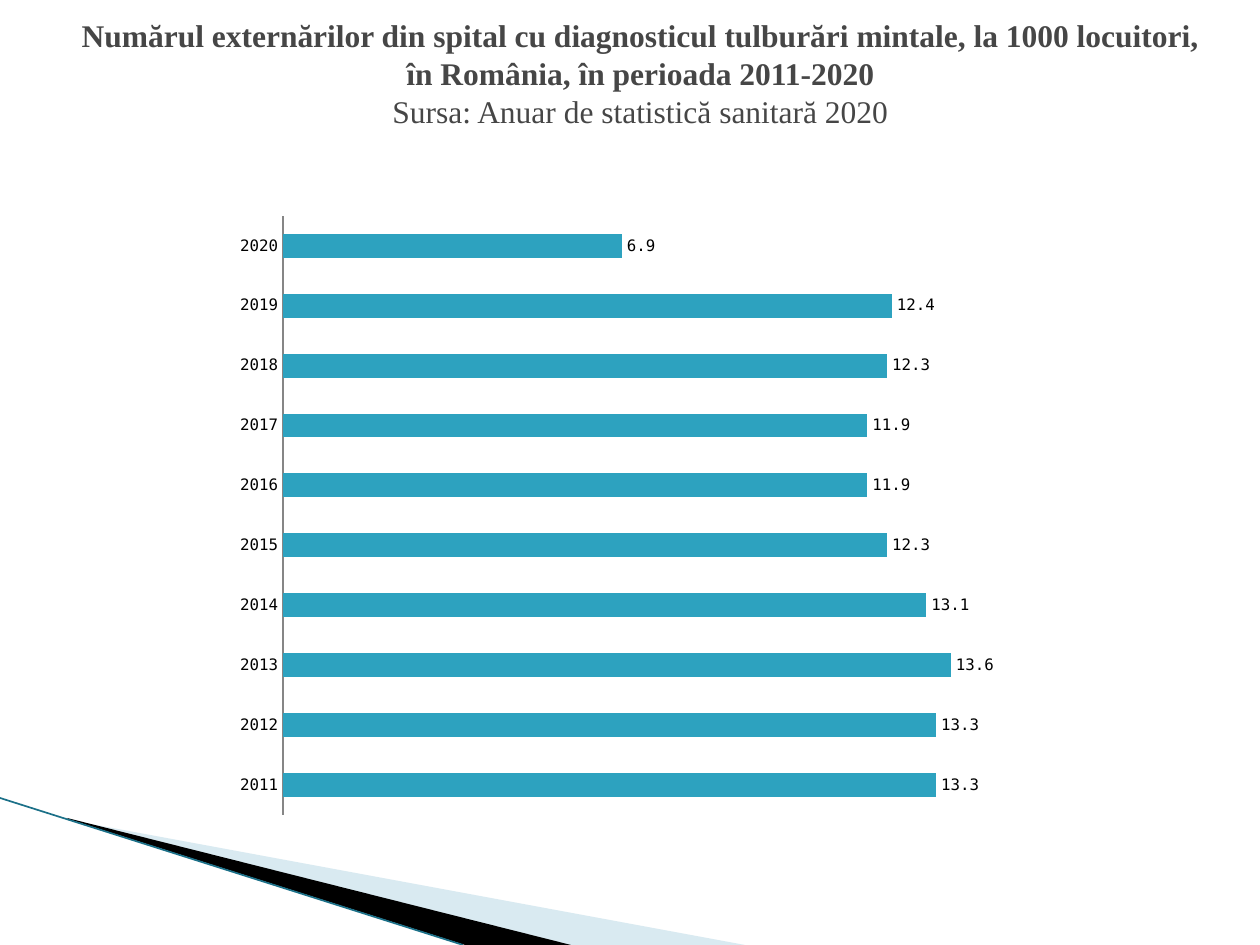
from lxml import etree
from pptx import Presentation, util as u
from pptx.chart.data import CategoryChartData
from pptx.dml.color import RGBColor
from pptx.enum import chart as c, shapes, text
from pptx.oxml import parse_xml
from pptx.oxml.ns import nsdecls, qn

# Content
TITLE = [
    ("Numărul externărilor din spital cu diagnosticul tulburări mintale, la 1000 locuitori,", True),
    ("în România, în perioada 2011-2020", True),
    ("Sursa: Anuar de statistică sanitară 2020", False),
]
YEARS = [str(year) for year in range(2011, 2021)]
RATES = [13.3, 13.3, 13.6, 13.1, 12.3, 11.9, 11.9, 12.3, 12.4, 6.9]

# Layout in px: left, top, width, height
SCALE = 914400 // 126
SLIDE = (1260, 945)
TITLE_BOX = (42, 16, 1197, 114)
CHART_BOX = (223, 204, 863, 624)
PLOT_BOX = (283, 216, 786, 599)
WEDGES = [  # corners, colour, opacity in percent
    ([(69, 820), (745, 945), (570, 945), (69, 819)], "A0CBDC", 40),
    ([(67, 818), (571, 945), (465, 945), (68, 819)], "000000", 100),
]
EDGE = (0, 798, 463, 945)


def px(*values):
    return [u.Emu(value * SCALE) for value in values]


def color(hex_value):
    return RGBColor.from_string(hex_value)


def set_font(font, **values):
    font.color.rgb = color(values.pop("color"))
    for name, value in values.items():
        setattr(font, name, value)


def add_wedge(slide, points, fill, opacity):
    builder = slide.shapes.build_freeform(*points[0], scale=SCALE)
    builder.add_line_segments(points[1:], close=True)
    shape = builder.convert_to_shape()
    shape.shadow.inherit = False
    shape.fill.solid()
    shape.fill.fore_color.rgb = color(fill)
    shape.line.fill.background()
    if opacity < 100:
        rgb = next(shape.element.spPr.iter(qn("a:srgbClr")))
        etree.SubElement(rgb, qn("a:alpha"), val=str(opacity * 1000))


def add_edge(slide):
    line = slide.shapes.add_connector(shapes.MSO_CONNECTOR.STRAIGHT, *px(*EDGE))
    line.line.color.rgb = color("1B7088")
    line.line.width = u.Pt(0.95)
    etree.SubElement(line.element.spPr, qn("a:effectLst"))


def add_title(slide):
    frame = slide.shapes.add_textbox(*px(*TITLE_BOX)).text_frame
    settings = dict(word_wrap=True, vertical_anchor=text.MSO_ANCHOR.MIDDLE,
                    margin_left=0, margin_right=0, margin_top=0, margin_bottom=0)
    for name, value in settings.items():
        setattr(frame, name, value)
    for index, (words, bold) in enumerate(TITLE):
        paragraph = frame.add_paragraph() if index else frame.paragraphs[0]
        paragraph.alignment = text.PP_ALIGN.CENTER
        paragraph.line_spacing = u.Pt(21.7)
        run = paragraph.add_run()
        run.text = words
        set_font(run.font, name="Times New Roman", size=u.Pt(18), bold=bold, color="464646")


def add_bars(slide):
    data = CategoryChartData(number_format="0.0")
    data.categories = YEARS
    data.add_series("Series 1", RATES)
    chart = slide.shapes.add_chart(
        c.XL_CHART_TYPE.BAR_CLUSTERED, *px(*CHART_BOX), data).chart
    chart.has_legend = chart.has_title = False
    label_font = dict(name="DejaVu Sans Mono", size=u.Pt(9), color="000000")
    set_font(chart.font, **{**label_font, "size": u.Pt(10)})

    # Bars and value labels
    plot = chart.plots[0]
    plot.gap_width = 150
    plot.vary_by_categories = False
    fill = plot.series[0].format.fill
    fill.solid()
    fill.fore_color.rgb = color("2DA2BF")
    plot.has_data_labels = True
    labels = plot.data_labels
    labels.show_value = True
    labels.position = c.XL_LABEL_POSITION.OUTSIDE_END
    set_font(labels.font, **label_font)

    # Axes
    years, rates = chart.category_axis, chart.value_axis
    years.major_tick_mark = c.XL_TICK_MARK.NONE
    years.format.line.color.rgb = color("868686")
    set_font(years.tick_labels.font, **label_font)
    rates.minimum_scale, rates.maximum_scale = 0, 16
    rates.has_major_gridlines = False
    rates.visible = False

    # Inner plot area as fractions of the chart
    left, top, width, height = CHART_BOX
    x, y, w, h = PLOT_BOX
    parts = dict(x=(x - left) / width, y=(y - top) / height, w=w / width, h=h / height)
    sizes = "".join(f'<c:{key} val="{value:.4f}"/>' for key, value in parts.items())
    layout = parse_xml(
        f'<c:layout {nsdecls("c")}><c:manualLayout><c:layoutTarget val="inner"/>'
        f'<c:xMode val="edge"/><c:yMode val="edge"/>{sizes}</c:manualLayout></c:layout>')
    area = chart.element.chart.plotArea
    for old in area.findall(qn("c:layout")):
        area.remove(old)
    area.insert(0, layout)


def main():
    presentation = Presentation()
    presentation.slide_width, presentation.slide_height = px(*SLIDE)
    slide = presentation.slides.add_slide(presentation.slide_layouts[6])
    for wedge in WEDGES:
        add_wedge(slide, *wedge)
    add_edge(slide)
    add_title(slide)
    add_bars(slide)
    presentation.save("out.pptx")


if __name__ == "__main__":
    main()
